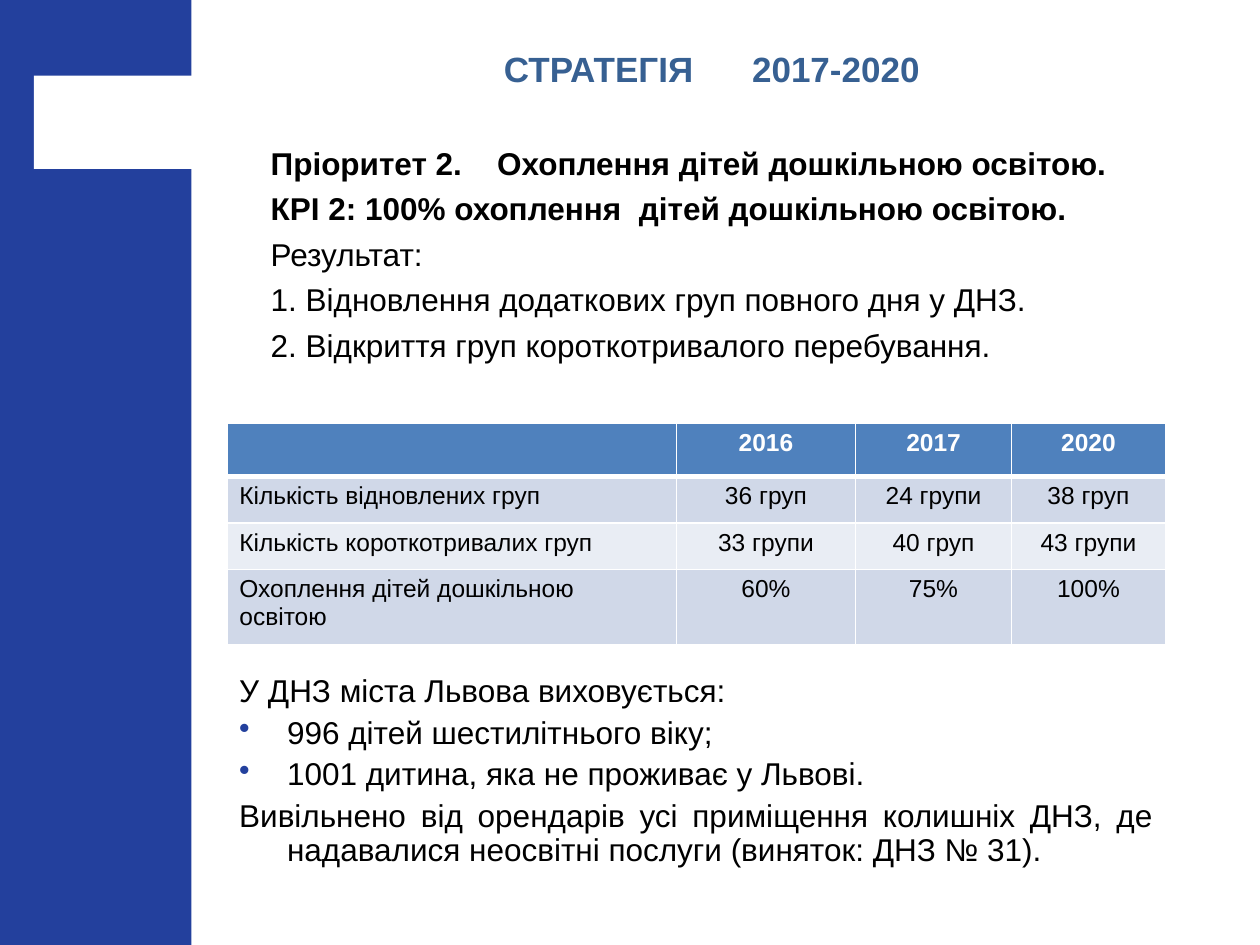
"""Build the preschool strategy slide with its targets table."""
from lxml import etree
from pptx import Presentation
from pptx.dml.color import RGBColor
from pptx.enum.text import MSO_ANCHOR, PP_ALIGN
from pptx.oxml.ns import qn
from pptx.util import Inches, Pt


def tint(code):
    return RGBColor.from_string(code)


def put(para, text, size=18, color="000000", bold=False, align=PP_ALIGN.LEFT,
        gap=0, lead=1.0, before=0, hang=0, bullet=None):
    props = para._p.get_or_add_pPr()
    if hang:
        props.set("marL", str(Inches(hang)))
        props.set("indent", str(-Inches(hang)))
    if bullet:
        shade = etree.SubElement(props, qn("a:buClr"))
        etree.SubElement(shade, qn("a:srgbClr"), val=bullet)
        etree.SubElement(props, qn("a:buChar"), char="•")
    para.alignment = align
    para.line_spacing = lead
    para.space_before = Pt(before)
    for part in text.partition("|"):
        if not part:
            continue
        run = para.add_run()
        run.text = " " if part == "|" else part
        font = run.font
        font.name, font.size, font.bold = "Arial", Pt(size), bold
        font.color.rgb = tint(color)
        if part == "|":
            font._element.set("spc", str(int(gap * 100)))


deck = Presentation()
deck.slide_width, deck.slide_height = Inches(10), Inches(7.5)
slide = deck.slides.add_slide(deck.slide_layouts[6])
shapes = slide.shapes

for left, top, width, height, fill in [
    (0, -0.04, 1.52, 7.63, "23409D"),
    (0.27, 0.6, 1.33, 0.74, "FFFFFF"),
]:
    block = shapes.add_shape(1, Inches(left), Inches(top), Inches(width), Inches(height))
    block.shadow.inherit = False
    block.fill.solid()
    block.fill.fore_color.rgb = tint(fill)
    block.line.fill.background()

title = [("СТРАТЕГІЯ|2017-2020", dict(
    size=20, color="376092", bold=True, align=PP_ALIGN.CENTER, gap=28))]
goals = [
    ("Пріоритет 2.|Охоплення дітей дошкільною освітою.", dict(bold=True, gap=15)),
    ("КРІ 2: 100% охоплення|дітей дошкільною освітою.", dict(bold=True, gap=5)),
    ("Результат:", {}),
    ("1. Відновлення додаткових груп повного дня у ДНЗ.", {}),
    ("2. Відкриття груп короткотривалого перебування.", {}),
]
facts = [
    ("У ДНЗ міста Львова виховується:", {}),
    ("996 дітей шестилітнього віку;", dict(bullet="23409D")),
    ("1001 дитина, яка не проживає у Львові.", dict(bullet="23409D")),
    ("Вивільнено від орендарів усі приміщення колишніх ДНЗ, де надавалися "
     "неосвітні послуги (виняток: ДНЗ № 31).", dict(align=PP_ALIGN.JUSTIFY)),
]
for left, top, width, height, anchor, lines, look in [
    (2.05, 0.15, 7.2, 0.79, MSO_ANCHOR.MIDDLE, title, {}),
    (2.05, 1.09, 7.45, 1.88, MSO_ANCHOR.TOP, goals, dict(hang=0.38)),
    (1.8, 5.31, 7.45, 2.03, MSO_ANCHOR.TOP, facts, dict(hang=0.38, lead=0.9)),
]:
    frame = shapes.add_textbox(
        Inches(left), Inches(top), Inches(width), Inches(height)).text_frame
    frame.word_wrap = True
    frame.vertical_anchor = anchor
    for row, (text, extra) in enumerate(lines):
        para = frame.add_paragraph() if row else frame.paragraphs[0]
        put(para, text, before=4.4 if row else 0, **look, **extra)

data = [
    ("", "2016", "2017", "2020"),
    ("Кількість відновлених груп", "36 груп", "24 групи", "38 груп"),
    ("Кількість короткотривалих груп", "33 групи", "40 груп", "43 групи"),
    ("Охоплення дітей дошкільною освітою", "60%", "75%", "100%"),
]
fills = ["4F81BD", "D0D8E8", "E9EDF4", "D0D8E8"]
table = shapes.add_table(
    4, 4, Inches(1.8), Inches(3.36), Inches(7.45), Inches(1.77)).table
for col, width in zip(table.columns, [3.57, 1.42, 1.24, 1.22]):
    col.width = Inches(width)
for row, height in zip(table.rows, [0.42, 0.37, 0.37, 0.6]):
    row.height = Inches(height)
for row, cells in enumerate(data):
    for col, text in enumerate(cells):
        cell = table.cell(row, col)
        put(cell.text_frame.paragraphs[0], text, size=14, bold=row == 0,
            color="000000" if row else "FFFFFF",
            align=PP_ALIGN.CENTER if col else PP_ALIGN.LEFT)
        props = cell._tc.get_or_add_tcPr()
        for side in "LRTB":
            thick = (row, side) in [(0, "B"), (1, "T")]
            edge = etree.SubElement(
                props, qn("a:ln" + side), w=str(Pt(3 if thick else 1)))
            solid = etree.SubElement(edge, qn("a:solidFill"))
            etree.SubElement(solid, qn("a:srgbClr"), val="FFFFFF")
        cell.fill.solid()
        cell.fill.fore_color.rgb = tint(fills[row])

deck.save("out.pptx")
